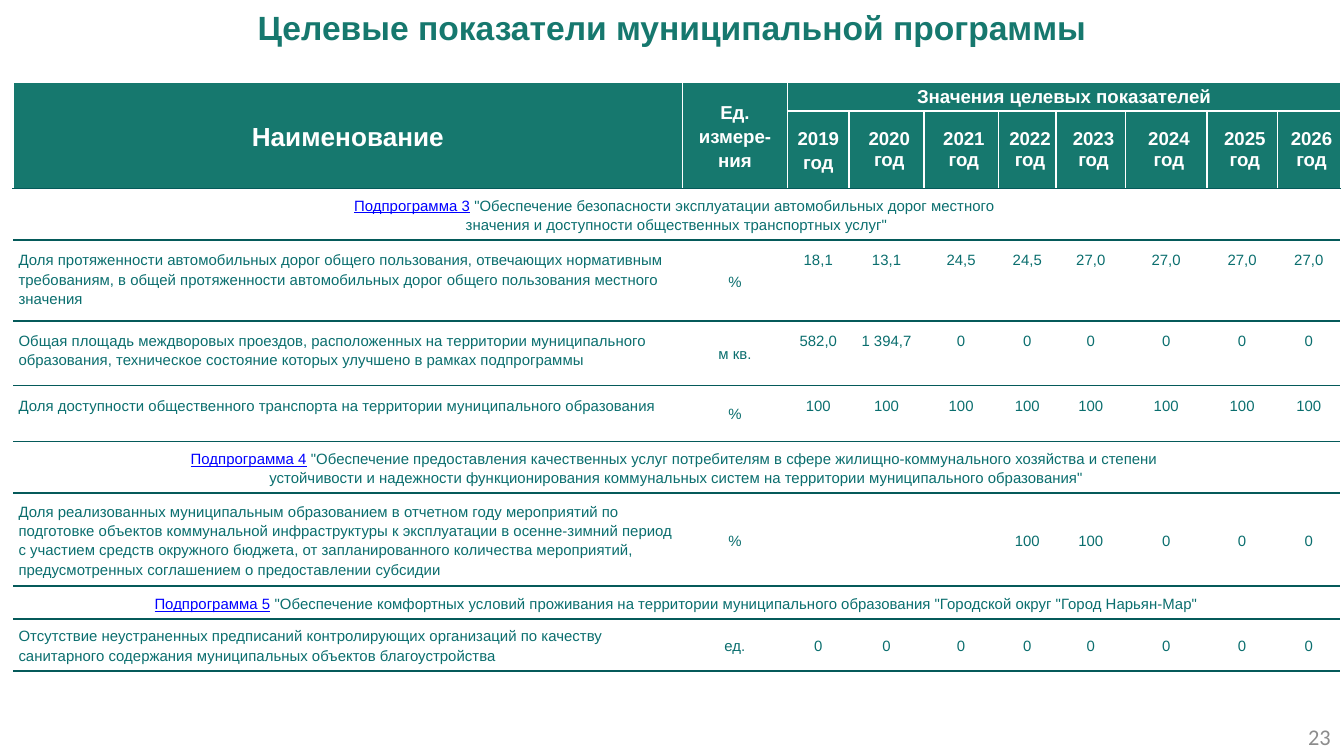
import pptx
import pptx.util
import pptx.dml.color
import pptx.enum.text
import pptx.oxml
import pptx.oxml.ns

Cm = pptx.util.Cm
Pt = pptx.util.Pt
RGB = pptx.dml.color.RGBColor
Align = pptx.enum.text.PP_ALIGN
Anchor = pptx.enum.text.MSO_ANCHOR

GREEN = RGB(0x16, 0x78, 0x6E)
TEAL = RGB(0x0A, 0x6E, 0x6E)
DARK = RGB(0x05, 0x5A, 0x5A)
BLUE = RGB(0x00, 0x00, 0xFF)
GRAY = RGB(0x8C, 0x8C, 0x8C)
WHITE = RGB(0xFF, 0xFF, 0xFF)

COLS = [12.65, 1.98, 1.17, 1.41, 1.41, 1.09, 1.31, 1.54, 1.33, 1.19]
ROWS = [0.51, 1.46, 0.98, 1.52, 1.22, 1.06, 0.97, 1.76, 0.62, 0.97]
YEARS = range(2019, 2027)

GROUPS = {
    2: ("Подпрограмма 3", [
        ' "Обеспечение безопасности эксплуатации автомобильных дорог местного ',
        'значения и доступности общественных транспортных услуг"']),
    6: ("Подпрограмма 4", [
        ' "Обеспечение предоставления качественных услуг потребителям в сфере '
        'жилищно-коммунального хозяйства и степени ',
        'устойчивости и надежности функционирования коммунальных систем '
        'на территории муниципального образования"']),
    8: ("Подпрограмма 5", [
        ' "Обеспечение комфортных условий проживания на территории '
        'муниципального образования "Городской округ "Город Нарьян-Мар"']),
}

GOALS = {
    3: ("Доля протяженности автомобильных дорог общего пользования, отвечающих "
        "нормативным требованиям, в общей протяженности автомобильных дорог "
        "общего пользования местного значения", "%",
        ["18,1", "13,1", "24,5", "24,5"] + ["27,0"] * 4),
    4: ("Общая площадь междворовых проездов, расположенных на территории "
        "муниципального образования, техническое состояние которых улучшено "
        "в рамках подпрограммы", "м кв.",
        ["582,0", "1 394,7"] + ["0"] * 6),
    5: ("Доля доступности общественного транспорта на территории "
        "муниципального образования", "%", ["100"] * 8),
    7: ("Доля реализованных муниципальным образованием в отчетном году "
        "мероприятий по подготовке объектов коммунальной инфраструктуры к "
        "эксплуатации в осенне-зимний период с участием средств окружного "
        "бюджета, от запланированного количества мероприятий, предусмотренных "
        "соглашением о предоставлении субсидии", "%",
        [""] * 3 + ["100"] * 2 + ["0"] * 3),
    9: ("Отсутствие неустраненных предписаний контролирующих организаций по "
        "качеству санитарного содержания муниципальных объектов "
        "благоустройства", "ед.", ["0"] * 8),
}


class Deck:
    head = {"size": Pt(10), "name": "Arial", "bold": True}
    body = {"size": Pt(8), "name": "Arial", "bold": False}

    def __init__(self):
        self.show = pptx.Presentation()
        self.show.slide_width = Cm(25.4)
        self.show.slide_height = Cm(14.29)
        self.slide = self.show.slides.add_slide(self.show.slide_layouts[5])

    def put(self, item, form):
        for key, value in form.items():
            setattr(item, key, value)

    def pad(self, across, down):
        return {"margin_left": Cm(across), "margin_right": Cm(across),
                "margin_top": Cm(down), "margin_bottom": Cm(down)}

    def run(self, para, text, form, color):
        run = para.add_run()
        run.text = text
        self.put(run.font, form)
        run.font.color.rgb = color

    def title(self, text):
        shape = self.slide.shapes.title
        self.put(shape, {"left": 0, "top": 0, "width": Cm(25.4), "height": Cm(1.02)})
        self.put(shape.text_frame, {"vertical_anchor": Anchor.TOP, "word_wrap": True})
        para = shape.text_frame.paragraphs[0]
        para.alignment = Align.CENTER
        self.run(para, text, {**self.head, "size": Pt(18)}, GREEN)

    def page(self, text):
        box = self.slide.shapes.add_textbox(Cm(19.48), Cm(13.54), Cm(5.92), Cm(0.76))
        frame = box.text_frame
        self.put(frame, {"word_wrap": True, "vertical_anchor": Anchor.MIDDLE})
        frame.paragraphs[0].alignment = Align.RIGHT
        self.run(frame.paragraphs[0], text, {"size": Pt(12), "name": "Calibri"}, GRAY)

    def grid(self):
        shape = self.slide.shapes.add_table(
            len(ROWS), len(COLS), Cm(0.25), Cm(1.55), Cm(sum(COLS)), Cm(sum(ROWS)))
        self.table = shape.table
        self.put(self.table, {"first_row": False, "horz_banding": False})
        for col, width in zip(self.table.columns, COLS):
            col.width = Cm(width)
        for row, high in zip(self.table.rows, ROWS):
            row.height = Cm(high)
        for row in range(len(ROWS)):
            for col in range(len(COLS)):
                self.paint(row, col)

    def paint(self, row, col):
        cell = self.table.cell(row, col)
        top = row < 2
        side = WHITE if top else None
        base = WHITE if row == 0 and col > 1 else DARK
        self.edge(cell, {"L": side, "R": side, "T": side or DARK, "B": base})
        if top:
            cell.fill.solid()
            cell.fill.fore_color.rgb = GREEN
        else:
            cell.fill.background()

    def edge(self, cell, sides):
        props = cell._tc.get_or_add_tcPr()
        space = pptx.oxml.ns.nsdecls("a")
        for side, color in sides.items():
            ink = (f'<a:solidFill><a:srgbClr val="{color}"/></a:solidFill>'
                   if color else "<a:noFill/>")
            props.append(pptx.oxml.parse_xml(
                f'<a:ln{side} {space} w="12700">{ink}</a:ln{side}>'))

    def cell(self, row, col, lines, form, color, pad, link="", align=Align.CENTER,
             anchor=Anchor.MIDDLE, space=1.15, indent=0):
        cell = self.table.cell(row, col)
        self.put(cell, {**self.pad(*pad), "vertical_anchor": anchor})
        for i, line in enumerate(lines):
            frame = cell.text_frame
            para = frame.add_paragraph() if i else frame.paragraphs[0]
            self.put(para, {"alignment": align, "line_spacing": space})
            if indent:
                para._p.get_or_add_pPr().set("marL", str(Cm(indent)))
            if link and not i:
                self.run(para, link, {**form, "underline": True}, BLUE)
            self.run(para, line, form, color)

    def span(self, row, col, last, end):
        self.table.cell(row, col).merge(self.table.cell(last, end))

    def heads(self):
        self.span(0, 0, 1, 0)
        self.span(0, 1, 1, 1)
        self.span(0, 2, 0, 9)
        tight = (0, 0.03)
        self.cell(0, 0, ["Наименование"], {**self.head, "size": Pt(14)}, WHITE, tight)
        self.cell(0, 1, ["Ед. измере-ния"], self.head, WHITE, (0.2, 0))
        self.cell(0, 2, ["Значения целевых показателей"], self.head, WHITE, tight,
                  anchor=Anchor.TOP)
        for col, year in enumerate(YEARS, 2):
            first = col == 2
            self.cell(1, col, [f"{year} год"], self.head, WHITE, tight,
                      space=1.15 if first else 1.0, indent=0 if first else 0.1)

    def group(self, row, link, lines):
        self.span(row, 0, row, 9)
        self.cell(row, 0, lines, self.body, TEAL, (0.1, 0.1), link)

    def goal(self, row, name, unit, values):
        high = row < 6
        pad = (0.1, 0.18 if high else 0.1)
        anchor = Anchor.TOP if high else Anchor.MIDDLE
        self.cell(row, 0, [name], self.body, TEAL, pad, align=Align.LEFT, anchor=anchor)
        self.cell(row, 1, [unit], self.body, TEAL, (0.1, 0.1))
        for col, value in enumerate(values, 2):
            if value:
                self.cell(row, col, [value], self.body, TEAL, pad, anchor=anchor)


def main():
    deck = Deck()
    deck.page("23")
    deck.title("Целевые показатели муниципальной программы")
    deck.grid()
    deck.heads()
    for row, group in GROUPS.items():
        deck.group(row, *group)
    for row, goal in GOALS.items():
        deck.goal(row, *goal)
    deck.show.save("out.pptx")


if __name__ == "__main__":
    main()
